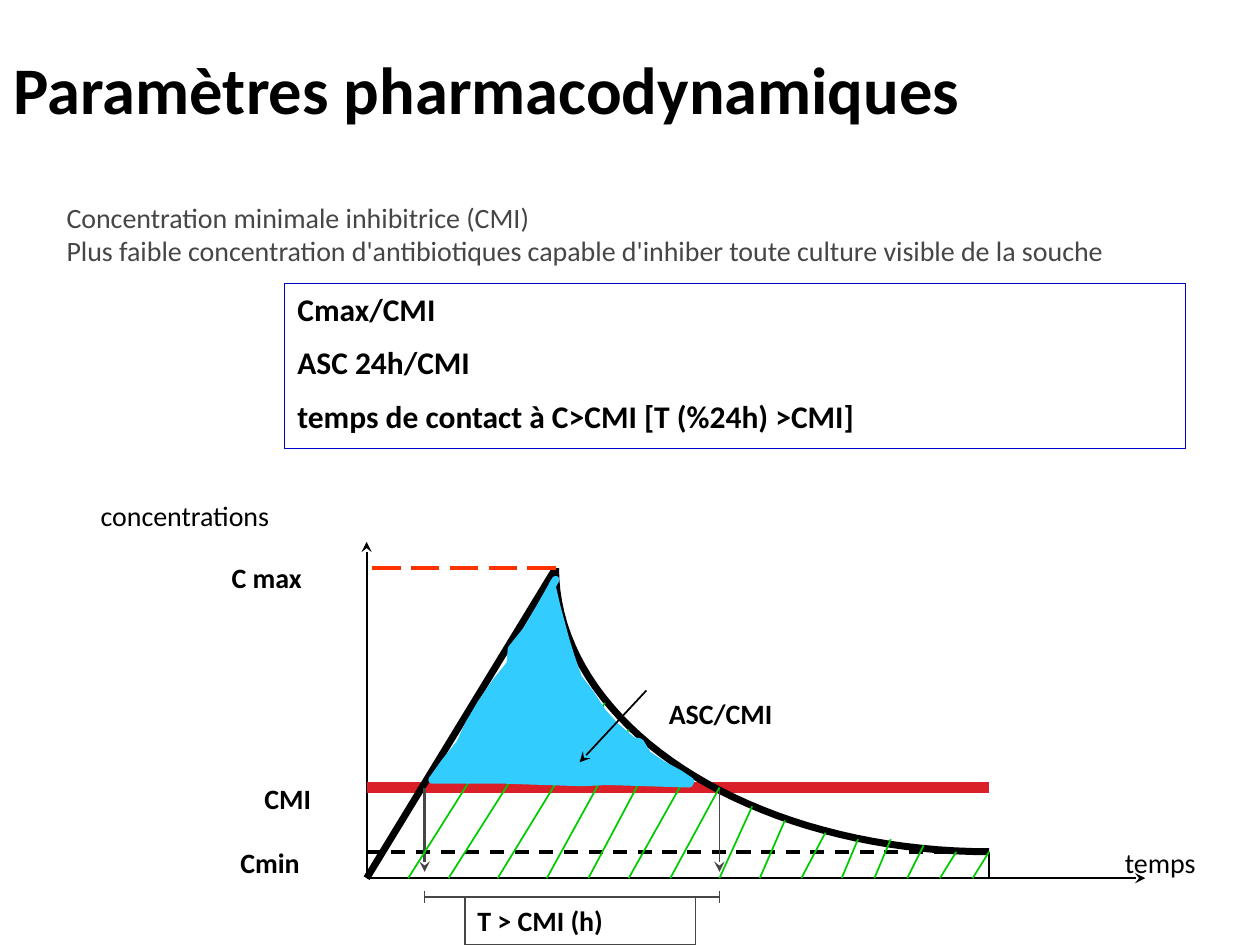
from dataclasses import dataclass
from math import cos, pi, sin

from lxml import etree
from pptx import Presentation
from pptx import util as u
from pptx.dml.color import RGBColor
from pptx.enum import dml, shapes, text
from pptx.oxml import ns

Inches = u.Inches


@dataclass(frozen=True)
class Theme:
    font: str = "Calibri"
    title: int = 38
    list: int = 18
    label: int = 16
    ink: str = "000000"
    grey: str = "464646"
    frame: str = "0000CC"
    cmi: str = "DA1F28"
    cmax: str = "FF3300"
    hatch: str = "00CC00"
    area: str = "33CCFF"


T = Theme()
DASH = dml.MSO_LINE.DASH
LONG_DASH = dml.MSO_LINE.LONG_DASH

# Curve, in inches right of and above the origin of the axes
PEAK = (1.5, 2.46)
END = (4.94, 0.21)
CMI = 0.72
ENTER, LEAVE = 0.46, 2.8

# Hatching: foot on the time axis, then top (x, y)
HATCH = [
    (0.33, 1.56, 1.95), (0.65, 1.69, 1.64), (1.04, 1.89, 1.39),
    (1.43, 2.08, 1.18), (1.76, 2.28, 0.98), (2.08, 2.54, 0.82),
    (2.41, 2.80, 0.72), (2.80, 3.06, 0.57), (3.12, 3.32, 0.46),
    (3.45, 3.64, 0.36), (3.77, 3.90, 0.31), (4.03, 4.16, 0.31),
    (4.29, 4.42, 0.26), (4.55, 4.68, 0.21), (4.81, 4.94, 0.21),
]

# Hand-drawn outline of the area above the CMI
AREA = [
    (0.52, 0.78), (0.62, 0.92), (0.74, 1.07), (0.81, 1.22), (0.91, 1.39),
    (1.02, 1.55), (1.14, 1.70), (1.15, 1.82), (1.27, 1.97), (1.37, 2.14),
    (1.50, 2.37), (1.47, 2.32), (1.51, 2.15), (1.58, 1.89), (1.62, 1.76),
    (1.68, 1.59), (1.78, 1.46), (1.87, 1.32), (1.97, 1.21), (2.11, 1.09),
    (2.17, 1.08), (2.23, 0.98), (2.35, 0.90), (2.48, 0.83), (2.57, 0.77),
    (2.56, 0.75), (2.22, 0.76), (1.91, 0.77), (1.71, 0.76), (1.10, 0.78),
    (0.82, 0.78),
]


def rgb(value):
    return RGBColor.from_string(value)


def place(sp, box):
    sp.left, sp.top, sp.width, sp.height = (Inches(v) for v in box)


def write(sp, *lines, size=T.label, color=T.ink, bold=False, wrap=True,
          anchor=text.MSO_ANCHOR.TOP, gap=0):
    """Fill a shape with one left-aligned, unbulleted paragraph per line."""
    tf = sp.text_frame
    tf.word_wrap = wrap
    tf.auto_size = text.MSO_AUTO_SIZE.NONE
    tf.vertical_anchor = anchor
    for i, line in enumerate(lines):
        p = tf.add_paragraph() if i else tf.paragraphs[0]
        p.text = line
        p.alignment = text.PP_ALIGN.LEFT
        p.space_before = u.Pt(gap if i else 0)
        pPr = p._p.get_or_add_pPr()
        pPr.set("marL", "0")
        pPr.set("indent", "0")
        etree.SubElement(pPr, ns.qn("a:buNone"))
        for r in p.runs:
            r.font.name = T.font
            r.font.size = u.Pt(size)
            r.font.bold = bold
            r.font.color.rgb = rgb(color)


def label(slide, box, *lines, **fmt):
    sp = slide.shapes.add_textbox(*(Inches(v) for v in box))
    write(sp, *lines, **fmt)


def outline(sp, color, width):
    sp.line.color.rgb = rgb(color)
    sp.line.width = u.Pt(width)


def line(slide, start, end, color=T.ink, width=1, dash=None, arrow=False):
    sp = slide.shapes.add_connector(
        shapes.MSO_CONNECTOR.STRAIGHT, *(Inches(v) for v in (*start, *end)))
    outline(sp, color, width)
    if dash:
        sp.line.dash_style = dash
    if arrow:
        etree.SubElement(sp.line._get_or_add_ln(), ns.qn("a:tailEnd"), type="stealth")
    etree.SubElement(sp._element.spPr, ns.qn("a:effectLst"))


def freeform(slide, points, color, width, fill=None):
    points = [(Inches(x), Inches(y)) for x, y in points]
    builder = slide.shapes.build_freeform(*points[0])
    builder.add_line_segments(points[1:], close=fill is not None)
    sp = builder.convert_to_shape()
    sp.shadow.inherit = False
    outline(sp, color, width)
    if fill:
        sp.fill.solid()
        sp.fill.fore_color.rgb = rgb(fill)
    else:
        sp.fill.background()


def add_heading(slide, box):
    sp = slide.shapes.title
    place(sp, box)
    write(sp, "Paramètres pharmacodynamiques", size=T.title, bold=True,
          anchor=text.MSO_ANCHOR.MIDDLE)


def add_parameters(slide, box):
    sp = slide.placeholders[1]
    place(sp, box)
    outline(sp, T.frame, 0.75)
    write(sp, "Cmax/CMI", "ASC 24h/CMI", "temps de contact à C>CMI [T (%24h) >CMI]",
          size=T.list, bold=True, gap=9)


def add_definition(slide, box):
    label(slide, box,
          "Concentration minimale inhibitrice (CMI) \nPlus faible concentration "
          "d'antibiotiques capable d'inhiber toute culture visible de la souche",
          color=T.grey, wrap=False)


def add_curve(slide, box):
    left, top, width, height = box

    def at(x, y):
        return left + x, top + height - y

    # Axes and thresholds
    line(slide, at(0, 0), at(0, height), arrow=True)
    line(slide, at(0, 0), at(width, 0), arrow=True)
    line(slide, at(0, END[1]), at(4.68, END[1]), width=2, dash=DASH)
    line(slide, at(0, CMI), at(END[0], CMI), T.cmi, 6)

    # Rise, then decay along a quarter of an ellipse
    line(slide, at(0, 0), at(*PEAK), width=4)
    rx, ry = END[0] - PEAK[0], PEAK[1] - END[1]
    steps = 40
    angles = [pi / 2 * i / steps for i in range(steps + 1)]
    freeform(slide, [at(END[0] - rx * cos(a), PEAK[1] - ry * sin(a))
                     for a in angles], T.ink, 4)
    line(slide, at(*PEAK), at(0, PEAK[1]), T.cmax, 2, LONG_DASH)
    line(slide, at(*END), at(END[0], 0))

    # Time spent above the CMI
    for x, weight in ((ENTER, 2), (LEAVE, 1)):
        line(slide, at(x, CMI), at(x, 0.05), T.grey, weight, arrow=True)
        line(slide, at(x, -0.1), at(x, -0.2), T.grey)
    line(slide, at(ENTER, -0.15), at(LEAVE, -0.15), T.grey)
    sp = slide.shapes.add_shape(
        shapes.MSO_SHAPE.RECTANGLE,
        *(Inches(v) for v in (*at(0.78, -0.15), 1.83, 0.38)))
    sp.shadow.inherit = False
    sp.fill.background()
    outline(sp, T.grey, 1)
    write(sp, "T > CMI (h)", bold=True)

    # Areas under the curve
    for foot, x, y in HATCH:
        line(slide, at(x, y), at(foot, 0), T.hatch)
    freeform(slide, [at(x, y) for x, y in AREA], T.area, 4.33, fill=T.area)
    line(slide, at(2.22, 1.49), at(1.69, 0.92), arrow=True)

    # Labels
    for x, y, w, words, bold in (
            (2.3, 1.49, 1.45, "ASC/CMI", True),
            (-1.17, 2.57, 0.98, "C max", True),
            (-1.1, 0.31, 0.91, "Cmin", True),
            (-0.91, 0.82, 0.72, "CMI", True),
            (5.92, 0.31, 0.98, "temps", False),
            (-2.21, 3.06, 2.02, "concentrations", False)):
        label(slide, (*at(x, y), w, 0.37), words, bold=bold)


def main():
    prs = Presentation()
    prs.slide_width, prs.slide_height = Inches(10), Inches(7.5)
    slide = prs.slides.add_slide(prs.slide_layouts[1])
    add_heading(slide, (0.01, 0, 9.99, 1.39))
    add_parameters(slide, (2.26, 2.25, 7.15, 1.31))
    add_definition(slide, (0.43, 1.54, 8.53, 0.64))
    add_curve(slide, (2.91, 4.3, 6.18, 2.67))
    prs.save("out.pptx")


if __name__ == "__main__":
    main()
